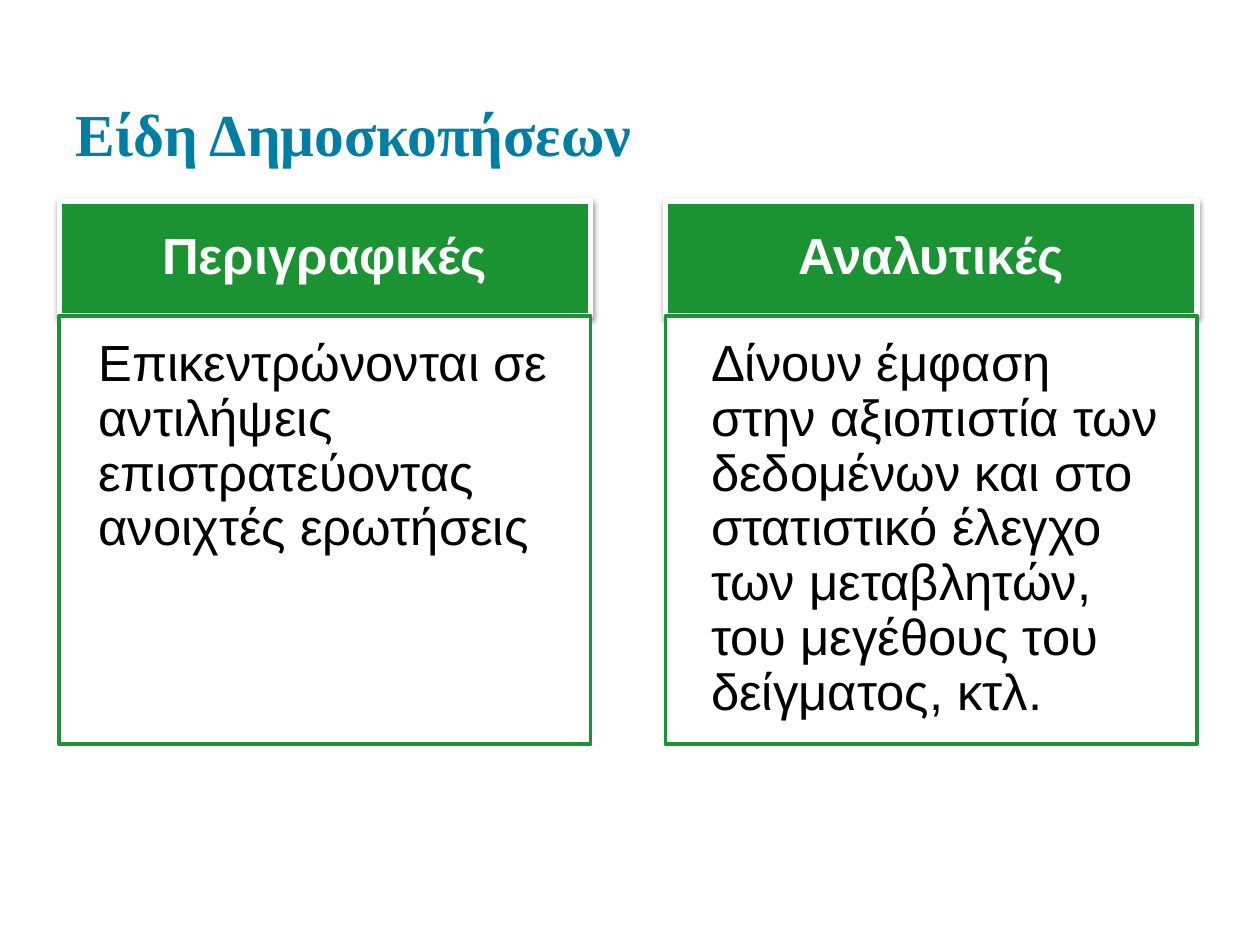
from dataclasses import dataclass

from lxml.etree import SubElement
from pptx import Presentation
from pptx.dml.color import RGBColor
from pptx.enum.shapes import MSO_SHAPE as Preset
from pptx.enum.text import MSO_ANCHOR as Anchor, PP_ALIGN as Align
from pptx.oxml.ns import qn
from pptx.util import Pt

TEAL = RGBColor(0x00, 0x7F, 0xA3)
GREEN = RGBColor(0x1B, 0x93, 0x32)
WHITE = RGBColor(0xFF, 0xFF, 0xFF)
BLACK = RGBColor(0x00, 0x00, 0x00)

# Column geometry, in points
LEFT, PITCH, WIDTH = 33.8, 346.4, 303.8
HEAD_TOP, HEAD_HEIGHT = 114.8, 65.5
BODY_TOP, BODY_HEIGHT = 180.5, 244.8


@dataclass
class Column:
    heading: str
    body: str
    indent: float


COLUMNS = [
    Column("Περιγραφικές",
           "Επικεντρώνονται σε αντιλήψεις επιστρατεύοντας ανοιχτές ερωτήσεις", 10),
    Column("Αναλυτικές",
           "Δίνουν έμφαση στην αξιοπιστία των δεδομένων και στο στατιστικό έλεγχο "
           "των μεταβλητών, του μεγέθους του δείγματος, κτλ.", 13.7),
]


def write_text(sp, text: str, *, font="Arial", size=29.0, color=BLACK, bold=False,
               align=Align.LEFT, anchor=Anchor.TOP, insets=(7.2, 7.2, 7.2, 7.2),
               spacing=0.9, level=0, indent=0.0):
    """Fill a shape with one formatted paragraph; insets are left, top, right, bottom."""
    tf = sp.text_frame
    tf.word_wrap = True
    tf.vertical_anchor = anchor
    tf.margin_left, tf.margin_top, tf.margin_right, tf.margin_bottom = map(Pt, insets)
    p = tf.paragraphs[0]
    p.alignment, p.line_spacing, p.level = align, spacing, level
    pPr = p._p.get_or_add_pPr()
    pPr.set("marL", str(Pt(indent)))
    pPr.set("indent", "0")
    r = p.add_run()
    r.text = text
    r.font.name, r.font.size, r.font.bold = font, Pt(size), bold
    r.font.color.rgb = color


def add_box(shapes, left: float, top: float, height: float,
            fill: RGBColor, line: RGBColor, line_width: float):
    sp = shapes.add_shape(Preset.RECTANGLE, Pt(left), Pt(top), Pt(WIDTH), Pt(height))
    sp.shadow.inherit = False
    sp.fill.solid()
    sp.fill.fore_color.rgb = fill
    sp.line.color.rgb = line
    sp.line.width = Pt(line_width)
    return sp


def add_shadow(sp):
    """Give a shape a soft shadow straight below it."""
    effects = sp._element.spPr.find(qn("a:effectLst"))
    shadow = SubElement(effects, qn("a:outerShdw"), blurRad=str(Pt(3.1)),
                        dist=str(Pt(1.6)), dir="5400000", rotWithShape="0")
    color = SubElement(shadow, qn("a:srgbClr"), val=str(BLACK))
    SubElement(color, qn("a:alpha"), val="38000")


def add_column(shapes, left: float, column: Column):
    head = add_box(shapes, left, HEAD_TOP, HEAD_HEIGHT, GREEN, WHITE, 3)
    add_shadow(head)
    write_text(head, column.heading, color=WHITE, bold=True, align=Align.CENTER,
               anchor=Anchor.MIDDLE, insets=(16.5, 9.4, 16.5, 9.4))
    body = add_box(shapes, left, BODY_TOP, BODY_HEIGHT, WHITE, GREEN, 2)
    write_text(body, column.body, insets=(12.4, 12.4, 16.5, 18),
               level=1, indent=column.indent)


def main():
    prs = Presentation()
    prs.slide_width, prs.slide_height = Pt(720), Pt(540)
    s = prs.slides.add_slide(prs.slide_layouts[5])

    # Title
    title = s.shapes.title
    title.left, title.top, title.width, title.height = map(Pt, (36, 17.3, 648, 86.4))
    write_text(title, "Είδη Δημοσκοπήσεων", font="Times New Roman", size=34,
               color=TEAL, bold=True, anchor=Anchor.BOTTOM, spacing=1.0)

    # Survey types side by side
    for i, column in enumerate(COLUMNS):
        add_column(s.shapes, LEFT + i * PITCH, column)

    prs.save("out.pptx")


if __name__ == "__main__":
    main()
